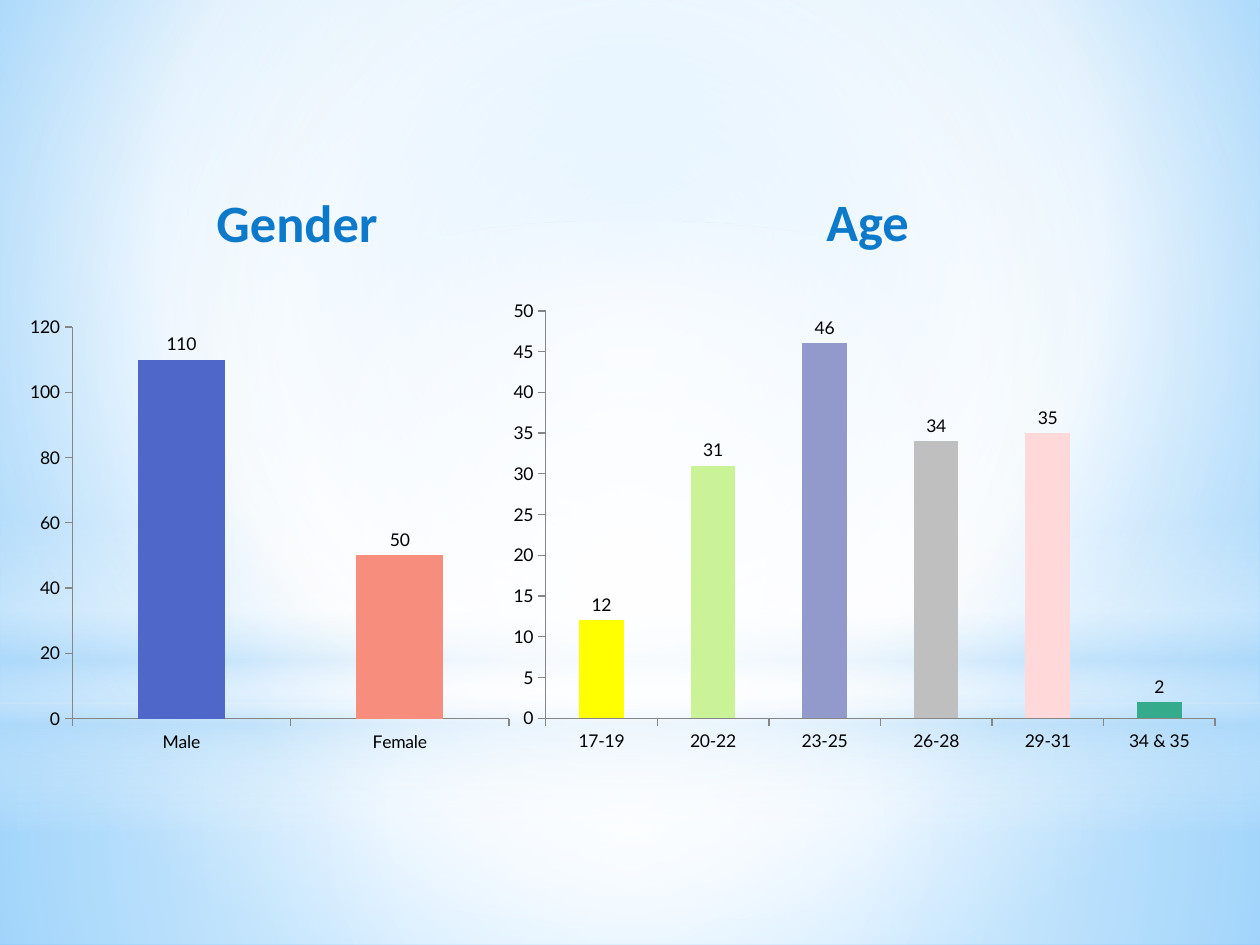
from lxml import etree
from pptx import Presentation
from pptx.chart.data import CategoryChartData
from pptx.dml.color import RGBColor
from pptx.enum.chart import XL_CHART_TYPE, XL_LABEL_POSITION, XL_TICK_MARK
from pptx.enum.shapes import MSO_SHAPE
from pptx.enum.text import MSO_AUTO_SIZE
from pptx.oxml.ns import qn
from pptx.util import Inches, Pt

COLUMNS = XL_CHART_TYPE.COLUMN_CLUSTERED
ABOVE_BAR = XL_LABEL_POSITION.OUTSIDE_END
TICK_OUT = XL_TICK_MARK.OUTSIDE
RECTANGLE, ELLIPSE = MSO_SHAPE.RECTANGLE, MSO_SHAPE.OVAL
FIT_SHAPE = MSO_AUTO_SIZE.SHAPE_TO_FIT_TEXT
BLANK_LAYOUT = 6

COLORS = {
    "heading": "0D79CA", "text": "000000", "axis": "868686",
    "white": "FFFFFF", "mist": "B4DCFA", "sky": "9ED5FF", "azure": "5BB9FF",
    "indigo": "4E67C8", "coral": "F78D7C", "yellow": "FFFF00",
    "lime": "CAF297", "lavender": "919ACA", "grey": "BFBFBF",
    "pink": "FFD9D9", "teal": "34AC8B",
}
CENTER = (50, 50, 50, 50)


def color(name):
    return RGBColor.from_string(COLORS[name])


def set_gradient(fill, element, stops, focus=None):
    """Apply (position, colour, opacity) stops in percent.

    focus is the left, top, right, bottom inset of a circular gradient;
    without it the gradient runs from top to bottom.
    """
    fill.gradient()
    gradient = element.find(".//" + qn("a:gradFill"))
    for child in list(gradient):
        gradient.remove(child)
    stop_list = etree.SubElement(gradient, qn("a:gsLst"))
    for position, name, opacity in stops:
        stop = etree.SubElement(stop_list, qn("a:gs"), pos=str(position * 1000))
        shade = etree.SubElement(stop, qn("a:srgbClr"), val=COLORS[name])
        if opacity < 100:
            etree.SubElement(shade, qn("a:alpha"), val=str(opacity * 1000))
    if focus:
        circle = etree.SubElement(gradient, qn("a:path"))
        circle.set("path", "circle")
        insets = {side: str(inset * 1000) for side, inset in zip("ltrb", focus)}
        etree.SubElement(circle, qn("a:fillToRect"), **insets)
    else:
        etree.SubElement(gradient, qn("a:lin"), ang="5400000", scaled="0")


def write(frame, text, font, size, tint, bold=False):
    span = frame.paragraphs[0].add_run()
    span.text = text
    span.font.name, span.font.size = font, Pt(size)
    span.font.bold, span.font.color.rgb = bold, color(tint)


class SlideBuilder:
    """Holds the style and the page; lengths are columns and rows of a grid."""

    cell = 0.1
    heading_font, chart_font = "Calibri", "Lato"
    heading_size, chart_size = 30, 10

    def __init__(self, page):
        self.page = page

    def place(self, *cells):
        return [Inches(count * self.cell) for count in cells]

    def backdrop(self, stops, focus):
        set_gradient(self.page.background.fill, self.page._element, stops, focus)

    def glow(self, kind, top, height, stops, focus=None):
        shape = self.page.shapes.add_shape(kind, *self.place(0, top, 100, height))
        shape.shadow.inherit = False
        shape.line.fill.background()
        set_gradient(shape.fill, shape._element, stops, focus)

    def heading(self, text, left, top, width, height):
        box = self.page.shapes.add_textbox(*self.place(left, top, width, height))
        box.text_frame.word_wrap = False
        box.text_frame.auto_size = FIT_SHAPE
        write(box.text_frame, text, font=self.heading_font,
              size=self.heading_size, tint="heading", bold=True)

    def column_chart(self, bars, left, top, width, height):
        """Draw one column per (category, value, colour)."""
        data = CategoryChartData()
        data.categories = [category for category, _, _ in bars]
        data.add_series("Series 1", [value for _, value, _ in bars])
        chart = self.page.shapes.add_chart(
            COLUMNS, *self.place(left, top, width, height), data).chart
        chart.has_legend = chart.has_title = False
        chart.font.name, chart.font.size = self.chart_font, Pt(self.chart_size)
        chart.font.color.rgb = color("text")
        for axis in (chart.category_axis, chart.value_axis):
            axis.has_major_gridlines = False
            axis.major_tick_mark = TICK_OUT
            axis.format.line.color.rgb = color("axis")
            axis.format.line.width = Pt(0.75)
        plot = chart.plots[0]
        plot.gap_width, plot.vary_by_categories = 150, False
        series = plot.series[0]
        series.format.fill.solid()
        series.format.fill.fore_color.rgb = color("indigo")
        for index, (_, _, tint) in enumerate(bars):
            fill = series.points[index].format.fill
            fill.solid()
            fill.fore_color.rgb = color(tint)
        series.data_labels.show_value = True
        series.data_labels.position = ABOVE_BAR


def main():
    deck = Presentation()
    deck.slide_width, deck.slide_height = Inches(10), Inches(7.5)
    slide = SlideBuilder(deck.slides.add_slide(deck.slide_layouts[BLANK_LAYOUT]))

    slide.backdrop([(0, "sky", 100), (60, "white", 100), (100, "azure", 100)],
                   focus=(20, 10, 20, 60))
    slide.glow(RECTANGLE, 55.8, 19.2,
               [(0, "white", 91), (37, "white", 76), (100, "mist", 79)], CENTER)
    slide.glow(RECTANGLE, 0, 55.8,
               [(0, "white", 89), (48, "white", 62), (100, "mist", 79)], CENTER)
    slide.glow(RECTANGLE, 41.2, 25,
               [(0, "white", 0), (29, "white", 30), (45, "mist", 40),
                (55, "white", 26), (65, "mist", 60), (100, "white", 0)])
    slide.glow(ELLIPSE, 17.5, 55.8, [(0, "white", 100), (56, "white", 0)], CENTER)

    slide.heading("Gender", 16.2, 14.6, 15, 6.1)
    slide.heading("Age", 64.6, 14.5, 8.6, 6.1)
    slide.column_chart([("Male", 110, "indigo"), ("Female", 50, "coral")],
                       1.6, 24.4, 39.6, 36)
    slide.column_chart([("17-19", 12, "yellow"), ("20-22", 31, "lime"),
                        ("23-25", 46, "lavender"), ("26-28", 34, "grey"),
                        ("29-31", 35, "pink"), ("34 & 35", 2, "teal")],
                       39.6, 23.1, 58, 37.3)
    deck.save("out.pptx")


if __name__ == "__main__":
    main()
